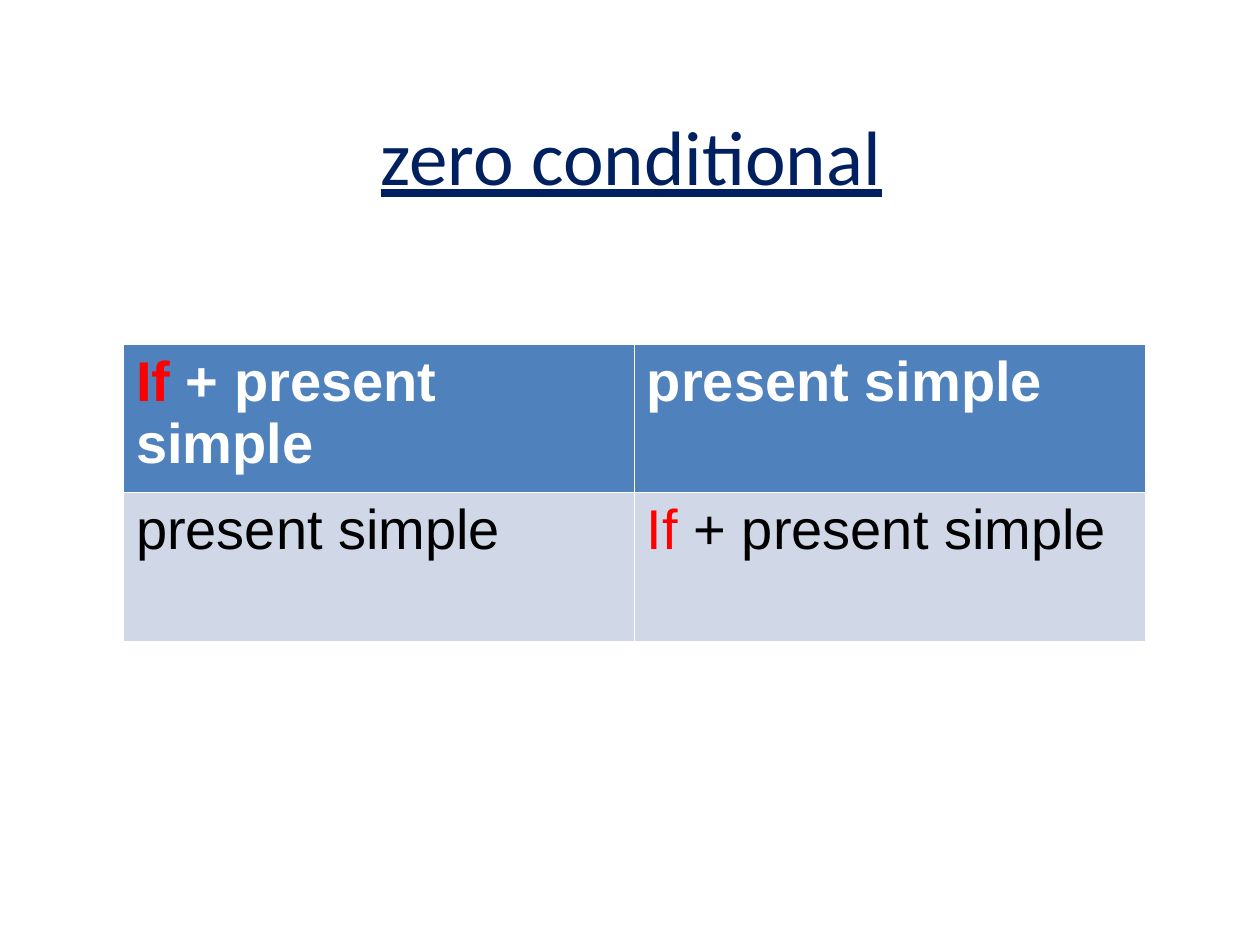
from typing import NamedTuple

from pptx import Presentation
from pptx.dml.color import RGBColor
from pptx.enum.text import MSO_ANCHOR, PP_ALIGN
from pptx.util import Inches, Pt

NAVY = RGBColor(0x00, 0x20, 0x60)
BLUE = RGBColor(0x4F, 0x81, 0xBD)
PALE_BLUE = RGBColor(0xD0, 0xD8, 0xE8)
RED = RGBColor(0xFF, 0x00, 0x00)
WHITE = RGBColor(0xFF, 0xFF, 0xFF)
BLACK = RGBColor(0x00, 0x00, 0x00)


class RowStyle(NamedTuple):
    fill: RGBColor
    color: RGBColor
    bold: bool


class Clause(NamedTuple):
    keyword: str
    tense: str


CONDITION = Clause("If ", "+ present simple")
RESULT = Clause("", "present simple")
ROWS = [
    (RowStyle(BLUE, WHITE, True), (CONDITION, RESULT)),
    (RowStyle(PALE_BLUE, BLACK, False), (RESULT, CONDITION)),
]


def add_run(p, text: str, *, size: int, font: str, color: RGBColor,
            bold: bool = False, underline: bool = False) -> None:
    r = p.add_run()
    r.text = text
    r.font.size = Pt(size)
    r.font.name = font
    r.font.color.rgb = color
    r.font.bold = bold
    r.font.underline = underline


def add_title(s, text: str) -> None:
    sp = s.shapes.add_textbox(Inches(0.51), Inches(0.6), Inches(9), Inches(1.25))
    tf = sp.text_frame
    tf.word_wrap = True
    tf.vertical_anchor = MSO_ANCHOR.MIDDLE
    p = tf.paragraphs[0]
    p.alignment = PP_ALIGN.CENTER
    add_run(p, text, size=44, font="Calibri", color=NAVY, underline=True)


def fill_cell(cell, clause: Clause, style: RowStyle) -> None:
    cell.fill.solid()
    cell.fill.fore_color.rgb = style.fill
    p = cell.text_frame.paragraphs[0]
    for text, color in zip(clause, (RED, style.color)):
        if text:
            add_run(p, text, size=32, font="Arial", color=color, bold=style.bold)


def add_clause_table(s) -> None:
    table = s.shapes.add_table(len(ROWS), 2, Inches(0.98), Inches(2.73),
                               Inches(8.11), Inches(2.36)).table
    for row, (style, clauses) in zip(table.rows, ROWS):
        for cell, clause in zip(row.cells, clauses):
            fill_cell(cell, clause, style)


def main() -> None:
    """Build the zero conditional slide."""
    prs = Presentation()
    prs.slide_width, prs.slide_height = Inches(10), Inches(7.5)
    s = prs.slides.add_slide(prs.slide_layouts[6])
    add_title(s, "zero conditional")
    add_clause_table(s)
    prs.save("out.pptx")


if __name__ == "__main__":
    main()
